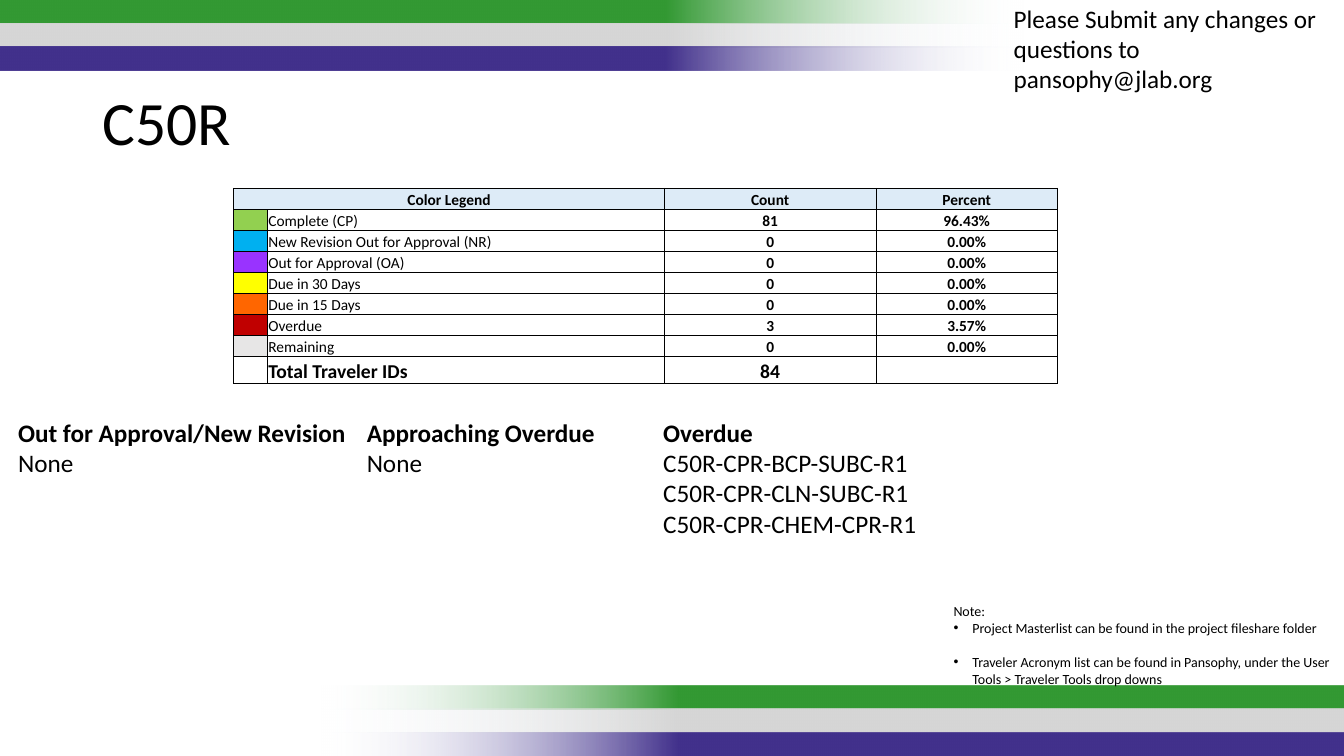
from lxml import etree
from pptx import Presentation
from pptx.dml.color import RGBColor
from pptx.enum.shapes import MSO_SHAPE
from pptx.enum.text import MSO_ANCHOR, PP_ALIGN
from pptx.oxml.ns import qn
from pptx.util import Pt

RECTANGLE = MSO_SHAPE.RECTANGLE
TOP, BOTTOM = MSO_ANCHOR.TOP, MSO_ANCHOR.BOTTOM
LEFT, CENTER = PP_ALIGN.LEFT, PP_ALIGN.CENTER
FONT = "Calibri"
BLACK = "000000"
TITLE_ONLY = 5

TITLE = "C50R"
BAND_COLORS = ["339933", "D6D6D6", "42318C"]
BAND_FADE = "F7FAFD"
BAND_WIDTH, BAND_HEIGHT, BAND_PITCH = 732, 17, 16.8
BAND_GROUPS = [(-1, 0, 180), (228.6, 489.6, 0)]

HEADER = ["Color Legend", "", "Count", "Percent"]
HEADER_FILL = "DDEBF7"
LEGEND = [
    ("92D050", "Complete (CP)", "81", "96.43%"),
    ("00B0F0", "New Revision Out for Approval (NR)", "0", "0.00%"),
    ("9933FF", "Out for Approval (OA)", "0", "0.00%"),
    ("FFFF00", "Due in 30 Days", "0", "0.00%"),
    ("FF6600", "Due in 15 Days", "0", "0.00%"),
    ("C00000", "Overdue", "3", "3.57%"),
    ("E7E6E6", "Remaining", "0", "0.00%"),
]
TOTAL = ["", "Total Traveler IDs", "84", ""]
TABLE_LEFT, TABLE_TOP = 167, 134.6
COLUMN_WIDTHS = [24, 283.6, 151.2, 129.6]
ROW_HEIGHT, TOTAL_HEIGHT = 15.05, 19.4

STATUS_TOP = 294.5
STATUS_LISTS = [
    (5.8, 248.4, ["Out for Approval/New Revision", "None"]),
    (254.9, 212.4, ["Approaching Overdue", "None"]),
    (466.6, 434, ["Overdue", "C50R-CPR-BCP-SUBC-R1", "C50R-CPR-CLN-SUBC-R1",
                  "C50R-CPR-CHEM-CPR-R1"]),
]
CONTACT = "Please Submit any changes or questions to pansophy@jlab.org"
NOTE_HEADING = "Note:"
NOTES = [
    "Project Masterlist can be found in the project fileshare folder",
    "Traveler Acronym list can be found in Pansophy, under the User Tools > Traveler Tools drop downs",
]
NOTE_INDENT, NOTE_GAP = 13.5, 12


def color(value):
    return RGBColor.from_string(value)


def format_font(paragraph, size, bold=False):
    paragraph.font.name = FONT
    paragraph.font.size = Pt(size)
    paragraph.font.bold = bold
    paragraph.font.color.rgb = color(BLACK)


def add_text(slide, left, top, width, height, lines, size, bold_first=False):
    box = slide.shapes.add_textbox(Pt(left), Pt(top), Pt(width), Pt(height))
    frame = box.text_frame
    frame.word_wrap = True
    frame.text = "\n".join(lines)
    for index, paragraph in enumerate(frame.paragraphs):
        format_font(paragraph, size, bold_first and index == 0)
    return frame


def add_bullet(paragraph):
    properties = paragraph._p.get_or_add_pPr()
    properties.set("marL", str(Pt(NOTE_INDENT)))
    properties.set("indent", str(-Pt(NOTE_INDENT)))
    etree.SubElement(properties, qn("a:buFont")).set("typeface", "Arial")
    etree.SubElement(properties, qn("a:buChar")).set("char", "•")


def add_band(slide, left, top, rotation, band_color):
    band = slide.shapes.add_shape(RECTANGLE, Pt(left), Pt(top), Pt(BAND_WIDTH), Pt(BAND_HEIGHT))
    band.shadow.inherit = False
    band.rotation = rotation
    band.line.fill.background()
    band.fill.gradient()
    band.fill.gradient_angle = 0
    fade, solid = band.fill.gradient_stops
    fade.position, solid.position = 0, 0.35
    fade.color.rgb, solid.color.rgb = color(BAND_FADE), color(band_color)
    for fade_color in list(band._element.iter(qn("a:srgbClr")))[:1]:
        etree.SubElement(fade_color, qn("a:alpha")).set("val", "0")


def set_borders(cell, widths):
    properties = cell._tc.get_or_add_tcPr()
    for index, (side, width) in enumerate(zip(("lnL", "lnR", "lnT", "lnB"), widths)):
        line = etree.Element(qn("a:" + side), w=str(Pt(width)))
        fill = etree.SubElement(line, qn("a:solidFill"))
        etree.SubElement(fill, qn("a:srgbClr")).set("val", BLACK)
        properties.insert(index, line)


def add_legend_table(slide):
    rows = [HEADER] + [["", *entry[1:]] for entry in LEGEND] + [TOTAL]
    last_row, last_column = len(rows) - 1, len(COLUMN_WIDTHS) - 1
    height = ROW_HEIGHT * last_row + TOTAL_HEIGHT
    table = slide.shapes.add_table(len(rows), len(COLUMN_WIDTHS), Pt(TABLE_LEFT), Pt(TABLE_TOP),
                                   Pt(sum(COLUMN_WIDTHS)), Pt(height)).table
    table.first_row = table.horz_banding = False
    for column, width in zip(table.columns, COLUMN_WIDTHS):
        column.width = Pt(width)
    for r, values in enumerate(rows):
        table.rows[r].height = Pt(TOTAL_HEIGHT if r == last_row else ROW_HEIGHT)
        for c, value in enumerate(values):
            cell = table.cell(r, c)
            cell.margin_left = cell.margin_right = cell.margin_top = Pt(0.7)
            cell.margin_bottom = 0
            cell.vertical_anchor = BOTTOM
            cell.text = value
            paragraph = cell.text_frame.paragraphs[0]
            paragraph.alignment = CENTER if r == 0 or c > 1 else LEFT
            size = 14 if r == last_row else 11
            format_font(paragraph, size, r in (0, last_row) or c > 1)
            if not value:
                etree.SubElement(paragraph._p, qn("a:endParaRPr")).set("sz", str(size * 100))
            if r == 0:
                fill = HEADER_FILL
            elif c == 0 and r < last_row:
                fill = LEGEND[r - 1][0]
            else:
                fill = None
            if fill:
                cell.fill.solid()
                cell.fill.fore_color.rgb = color(fill)
            else:
                cell.fill.background()
            outer = (c == 0, c == last_column, r == 0, r == last_row)
            set_borders(cell, [1 if edge else 0.5 for edge in outer])
    table.cell(0, 0).merge(table.cell(0, 1))


def main():
    presentation = Presentation()
    presentation.slide_width, presentation.slide_height = Pt(960), Pt(540)
    slide = presentation.slides.add_slide(presentation.slide_layouts[TITLE_ONLY])

    for left, top, rotation in BAND_GROUPS:
        for index, band_color in enumerate(BAND_COLORS):
            add_band(slide, left, top + index * BAND_PITCH, rotation, band_color)

    title = slide.shapes.title
    title.left, title.top, title.width, title.height = Pt(66), Pt(62), Pt(828), Pt(71)
    title.text_frame.text = TITLE
    title.text_frame.vertical_anchor = TOP
    paragraph = title.text_frame.paragraphs[0]
    paragraph.alignment = LEFT
    paragraph.line_spacing = 0.9
    format_font(paragraph, 44)

    add_legend_table(slide)
    for left, width, lines in STATUS_LISTS:
        add_text(slide, left, STATUS_TOP, width, 7.2 + 21.8 * len(lines), lines, 18, True)
    add_text(slide, 717, -1.4, 243.4, 72.7, [CONTACT], 18)

    notes = add_text(slide, 674, 427, 286, 67.7, [NOTE_HEADING], 10)
    for index, note in enumerate(NOTES):
        paragraph = notes.add_paragraph()
        paragraph.text = note
        paragraph.space_before = Pt(NOTE_GAP if index else 0)
        add_bullet(paragraph)
        format_font(paragraph, 10)

    presentation.save("out.pptx")


if __name__ == "__main__":
    main()
